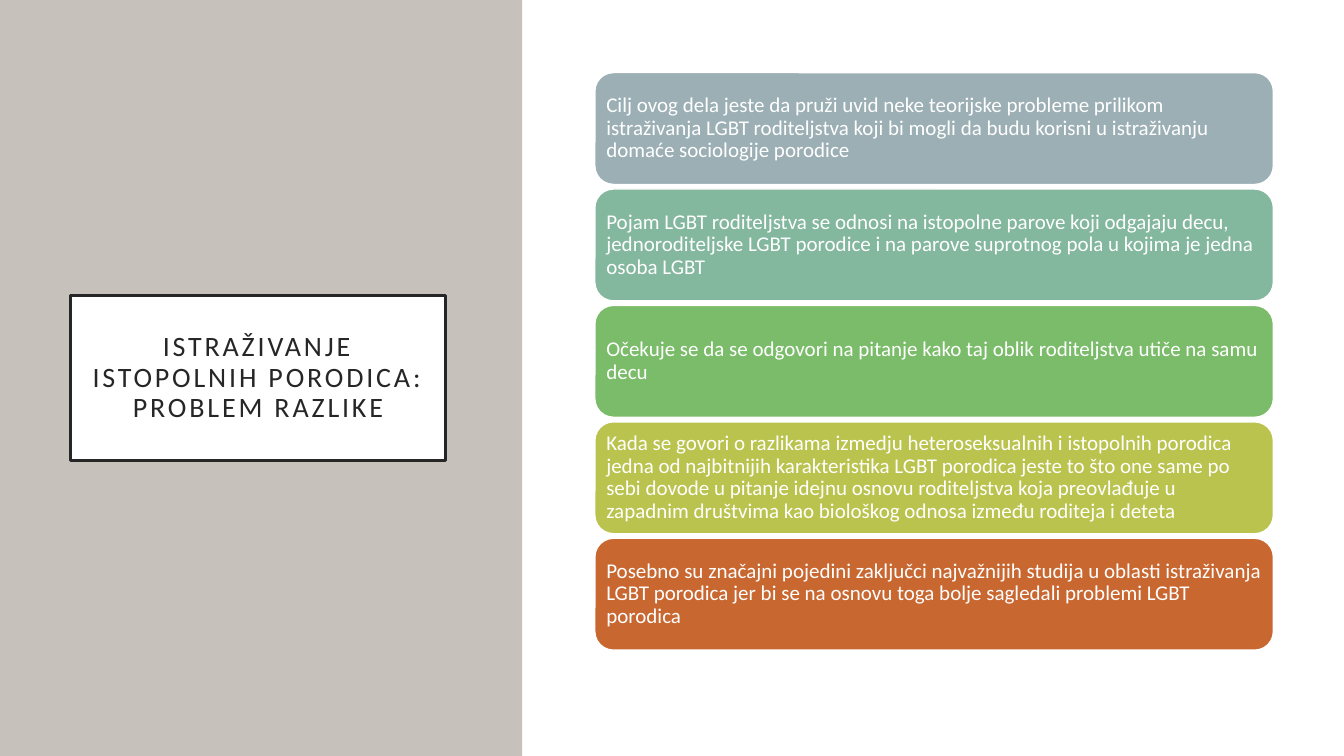
import pptx
import pptx.util
import pptx.dml.color
import pptx.enum.shapes
import pptx.enum.text
from dataclasses import dataclass

Inches = pptx.util.Inches
Pt = pptx.util.Pt
Kind = pptx.enum.shapes.MSO_SHAPE
Align = pptx.enum.text.PP_ALIGN


@dataclass(frozen=True)
class Theme:
    font: str = "Calibri"
    head: int = 20
    body: int = 15
    ink: str = "262626"
    white: str = "FFFFFF"
    side: str = "C6C1BA"
    cards: tuple = ("9BAFB5", "83B79E", "7ABC69", "BAC34D", "C96731")


def tint(code):
    return pptx.dml.color.RGBColor.from_string(code)


class Page:
    def __init__(self, deck, theme):
        self.theme = theme
        self.slide = deck.slides.add_slide(deck.slide_layouts[5])

    def paint(self, shape, fill, line=None, width=1):
        shape.fill.solid()
        shape.fill.fore_color.rgb = tint(fill)
        if line:
            shape.line.color.rgb = tint(line)
            shape.line.width = Pt(width)
        else:
            shape.line.fill.background()

    def label(self, shape, text, size, color, align, inset):
        frame = shape.text_frame
        frame.text = text
        frame.word_wrap = True
        frame.auto_size = pptx.enum.text.MSO_AUTO_SIZE.NONE
        frame.vertical_anchor = pptx.enum.text.MSO_ANCHOR.MIDDLE
        frame.margin_left = frame.margin_right = Inches(inset)
        frame.margin_top = frame.margin_bottom = Inches(inset)
        para = frame.paragraphs[0]
        para.alignment = align
        para.line_spacing = 0.9
        para.font.name = self.theme.font
        para.font.size = Pt(size)
        para.font.color.rgb = tint(color)
        return para

    def block(self, kind, box, fill, line=None):
        shape = self.slide.shapes.add_shape(kind, *map(Inches, box))
        shape.shadow.inherit = False
        self.paint(shape, fill, line)
        return shape

    def panel(self, box, fill):
        shape = self.block(Kind.RECTANGLE, box, fill)
        self.slide.shapes._spTree.insert(2, shape._element)

    def title(self, box, text):
        theme = self.theme
        shape = self.slide.shapes.title
        shape.left, shape.top, shape.width, shape.height = map(Inches, box)
        self.paint(shape, theme.white, theme.ink, 2.5)
        para = self.label(shape, text, theme.head, theme.ink, Align.CENTER, 0.2)
        for run in para.runs:
            run._r.get_or_add_rPr().set("spc", "200")

    def card(self, box, fill, text):
        theme = self.theme
        shape = self.block(Kind.ROUNDED_RECTANGLE, box, fill, theme.white)
        self.label(shape, text, theme.body, theme.white, Align.LEFT, 0.06)


POINTS = (
    "Cilj ovog dela jeste da pruži uvid neke teorijske probleme prilikom "
    "istraživanja LGBT roditeljstva koji bi mogli da budu korisni u "
    "istraživanju domaće sociologije porodice",
    "Pojam LGBT roditeljstva se odnosi na istopolne parove koji odgajaju "
    "decu, jednoroditeljske LGBT porodice i na parove suprotnog pola u "
    "kojima je jedna osoba LGBT",
    "Očekuje se da se odgovori na pitanje kako taj oblik roditeljstva utiče "
    "na samu decu",
    "Kada se govori o razlikama izmedju heteroseksualnih i istopolnih "
    "porodica jedna od najbitnijih karakteristika LGBT porodica jeste to "
    "što one same po sebi dovode u pitanje idejnu osnovu roditeljstva koja "
    "preovlađuje u zapadnim društvima kao biološkog odnosa između roditeja "
    "i deteta",
    "Posebno su značajni pojedini zaključci najvažnijih studija u oblasti "
    "istraživanja LGBT porodica jer bi se na osnovu toga bolje sagledali "
    "problemi LGBT porodica",
)


def main():
    deck = pptx.Presentation()
    deck.slide_width = Inches(13.33)
    deck.slide_height = Inches(7.5)
    theme = Theme()
    page = Page(deck, theme)

    page.panel((5.2, 0, 8.13, 7.5), theme.white)
    page.panel((0, 0, 5.18, 7.5), theme.side)
    page.title((0.7, 2.93, 3.72, 1.64),
               "ISTRAŽIVANJE ISTOPOLNIH PORODICA:\vPROBLEM RAZLIKE")

    top, last = 0.72, 5.34
    step = (last - top) / (len(POINTS) - 1)
    for row, (fill, text) in enumerate(zip(theme.cards, POINTS)):
        page.card((5.9, top + row * step, 6.73, 1.11), fill, text)

    deck.save("out.pptx")


if __name__ == "__main__":
    main()
